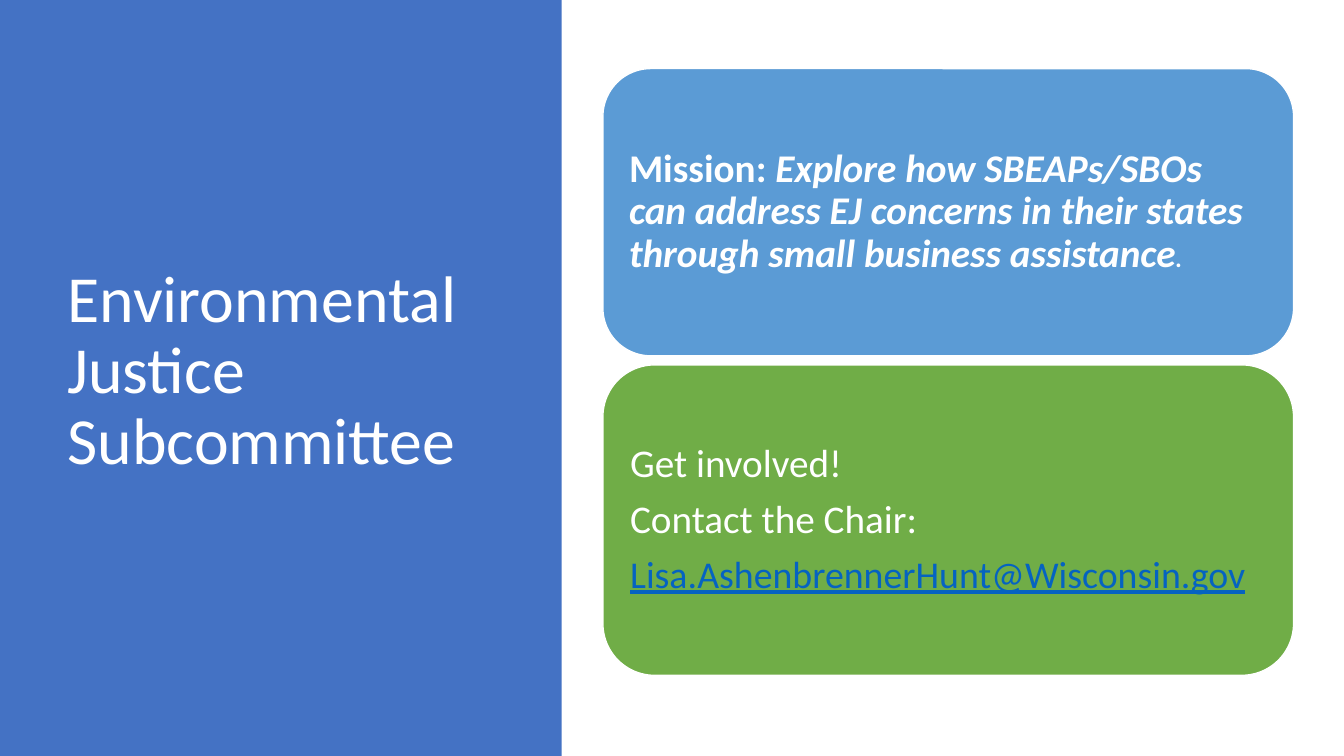
from dataclasses import dataclass

from pptx import Presentation
from pptx import util as u
from pptx.dml.color import RGBColor
from pptx.enum import shapes, text


@dataclass(frozen=True)
class Theme:
    font: str = "Calibri"
    white: str = "FFFFFF"
    panel: str = "4472C4"
    blue: str = "5B9BD5"
    green: str = "70AD47"
    link: str = "0563C1"
    title: float = 47
    body: float = 28
    mail: float = 27
    dot: float = 18
    lead: float = 0.9
    gap: float = 9.5
    inset: float = 0.12


class Deck:
    def __init__(self, theme):
        self.theme = theme
        self.file = Presentation()
        self.file.slide_width = u.Inches(13.33)
        self.file.slide_height = u.Inches(7.5)
        self.slide = self.file.slides.add_slide(self.file.slide_layouts[6])

    def area(self, left, top, width, height):
        """Turn percentages of the slide's size into lengths."""
        wide, high = self.file.slide_width, self.file.slide_height
        return [round(share * side / 100) for share, side in
                zip((left, top, width, height), (wide, high, wide, high))]

    def block(self, kind, area, fill, edge=None):
        shape = self.slide.shapes.add_shape(kind, *self.area(*area))
        shape.shadow.inherit = False
        shape.fill.solid()
        shape.fill.fore_color.rgb = RGBColor.from_string(fill)
        if edge:
            shape.line.color.rgb = RGBColor.from_string(edge)
            shape.line.width = u.Pt(1)
        else:
            shape.line.fill.background()
        return shape

    def panel(self, area, fill):
        self.block(shapes.MSO_SHAPE.RECTANGLE, area, fill)

    def title(self, area, words):
        box = self.slide.shapes.add_textbox(*self.area(*area))
        self.lines(box.text_frame, [[(words, {"size": self.theme.title})]])

    def card(self, area, fill, lines):
        shape = self.block(shapes.MSO_SHAPE.ROUNDED_RECTANGLE, area, fill,
                           self.theme.white)
        frame = shape.text_frame
        inset = u.Inches(self.theme.inset)
        frame.margin_left = frame.margin_right = inset
        frame.margin_top = frame.margin_bottom = inset
        self.lines(frame, lines, self.theme.gap)

    def lines(self, frame, lines, gap=0):
        """Fill a frame with lines, each a list of (words, style) runs."""
        frame.word_wrap = True
        frame.vertical_anchor = text.MSO_ANCHOR.MIDDLE
        for count, line in enumerate(lines):
            para = frame.add_paragraph() if count else frame.paragraphs[0]
            para.alignment = text.PP_ALIGN.LEFT
            para.line_spacing = self.theme.lead
            para.space_after = u.Pt(gap)
            for words, style in line:
                self.words(para, words, **style)

    def words(self, para, words, size=None, color=None, bold=False,
              slant=False, under=False):
        run = para.add_run()
        run.text = words
        font = run.font
        font.name = self.theme.font
        font.size = u.Pt(size or self.theme.body)
        font.color.rgb = RGBColor.from_string(color or self.theme.white)
        font.bold, font.italic, font.underline = bold, slant, under


def main():
    theme = Theme()
    deck = Deck(theme)
    strong = {"bold": True, "slant": True}
    top, total = 9.07, 80.27
    left, width = 44.86, 51.39
    first, second = 38, 41.07

    deck.panel((0, 0, 41.79, 100), theme.panel)
    deck.title((4.28, top, 31.21, total), "Environmental Justice Subcommittee")
    deck.card((left, top, width, first), theme.blue, [[
        ("Mission: ", {"bold": True}),
        ("Explore how SBEAPs/SBOs can address EJ concerns in their states "
         "through small business assistance", strong),
        (".", {**strong, "size": theme.dot}),
    ]])
    deck.card((left, top + total - second, width, second), theme.green, [
        [("Get involved!", {})],
        [("Contact the Chair:", {})],
        [("Lisa.AshenbrennerHunt@Wisconsin.gov",
          {"size": theme.mail, "color": theme.link, "under": True})],
    ])
    deck.file.save("out.pptx")


if __name__ == "__main__":
    main()
